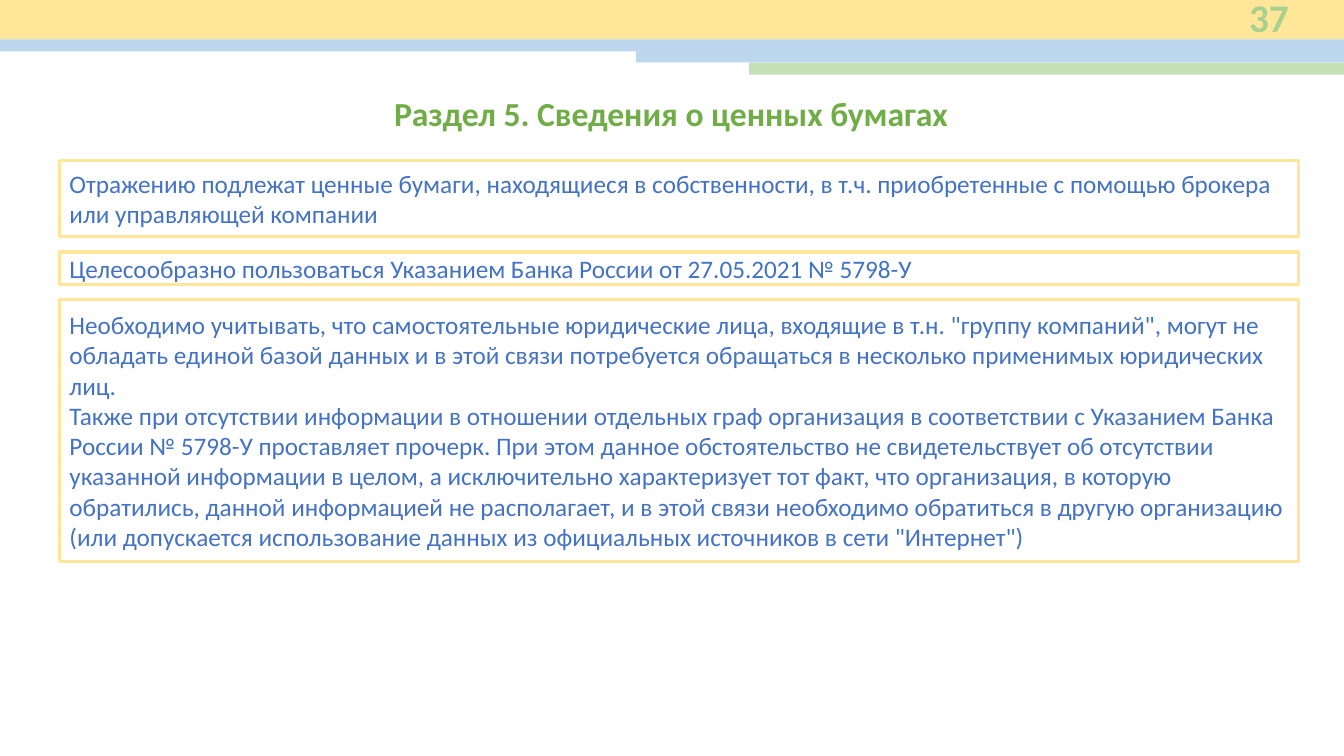
from pptx import Presentation
from pptx.dml.color import RGBColor
from pptx.enum import shapes, text
from pptx.util import Inches, Pt

YELLOW = RGBColor(0xFF, 0xE6, 0x99)
SKY = RGBColor(0xBD, 0xD7, 0xEE)
MINT = RGBColor(0xC5, 0xE0, 0xB4)
GREEN = RGBColor(0x70, 0xAD, 0x47)
PALE = RGBColor(0xA9, 0xD1, 0x8E)
BLUE = RGBColor(0x44, 0x72, 0xC4)

# Content
WIDE, HIGH = 13.33, 7.5
TITLE = "Раздел 5. Сведения о ценных бумагах"
NUMBER = "37"
BANDS = [  # left, top, height, colour; each runs to the right edge
    (0, 0, 0.39, YELLOW),
    (0, 0.39, 0.12, SKY),
    (6.31, 0.5, 0.12, SKY),
    (7.43, 0.62, 0.12, MINT),
]
NOTES = [  # height, paragraphs
    (0.76, ["Отражению подлежат ценные бумаги, находящиеся в собственности, в т.ч. "
            "приобретенные с помощью брокера или управляющей компании"]),
    (0.32, ["Целесообразно пользоваться Указанием Банка России от 27.05.2021 № 5798-У"]),
    (2.6, ['Необходимо учитывать, что самостоятельные юридические лица, входящие в т.н. '
           '"группу компаний", могут не обладать единой базой данных и в этой связи '
           'потребуется обращаться в несколько применимых юридических лиц.',
           'Также при отсутствии информации в отношении отдельных граф организация в '
           'соответствии с Указанием Банка России № 5798-У проставляет прочерк. При этом '
           'данное обстоятельство не свидетельствует об отсутствии указанной информации в '
           'целом, а исключительно характеризует тот факт, что организация, в которую '
           'обратились, данной информацией не располагает, и в этой связи необходимо '
           'обратиться в другую организацию (или допускается использование данных из '
           'официальных источников в сети "Интернет")']),
]
LEFT, TOP, WIDTH, GAP = 0.59, 1.59, 12.29, 0.15


def write(shape, lines, size, color, bold=False, align=text.PP_ALIGN.LEFT):
    frame = shape.text_frame
    frame.word_wrap = True
    frame.auto_size = text.MSO_AUTO_SIZE.NONE
    frame.vertical_anchor = text.MSO_ANCHOR.MIDDLE
    frame.text = "\n".join(lines)
    for para in frame.paragraphs:
        para.alignment = align
        font = para.font
        font.name, font.size, font.bold = "Calibri", Pt(size), bold
        font.color.rgb = color


def block(left, top, width, height):
    box = slide.shapes.add_shape(shapes.MSO_SHAPE.RECTANGLE, Inches(left),
                                 Inches(top), Inches(width), Inches(height))
    box.shadow.inherit = False
    return box


deck = Presentation()
deck.slide_width, deck.slide_height = Inches(WIDE), Inches(HIGH)
slide = deck.slides.add_slide(deck.slide_layouts[5])

# Header bands
for left, top, height, color in BANDS:
    band = block(left, top, WIDE - left, height)
    band.fill.solid()
    band.fill.fore_color.rgb = color
    band.line.fill.background()

# Title
title = slide.shapes.title
title.left, title.top = Inches(LEFT), Inches(0.87)
title.width, title.height = Inches(12.13), Inches(0.5)
write(title, [TITLE], 24, GREEN, bold=True, align=text.PP_ALIGN.CENTER)

# Framed notes, stacked with equal gaps
top = TOP
for height, lines in NOTES:
    note = block(LEFT, top, WIDTH, height)
    note.fill.background()
    note.line.color.rgb = YELLOW
    note.line.width = Pt(2.25)
    write(note, lines, 18, BLUE)
    top += height + GAP

# Page number
page = slide.shapes.add_textbox(Inches(11.63), Inches(-0.05), Inches(1.25), Inches(0.44))
write(page, [NUMBER], 28, PALE, bold=True, align=text.PP_ALIGN.RIGHT)

deck.save("out.pptx")
